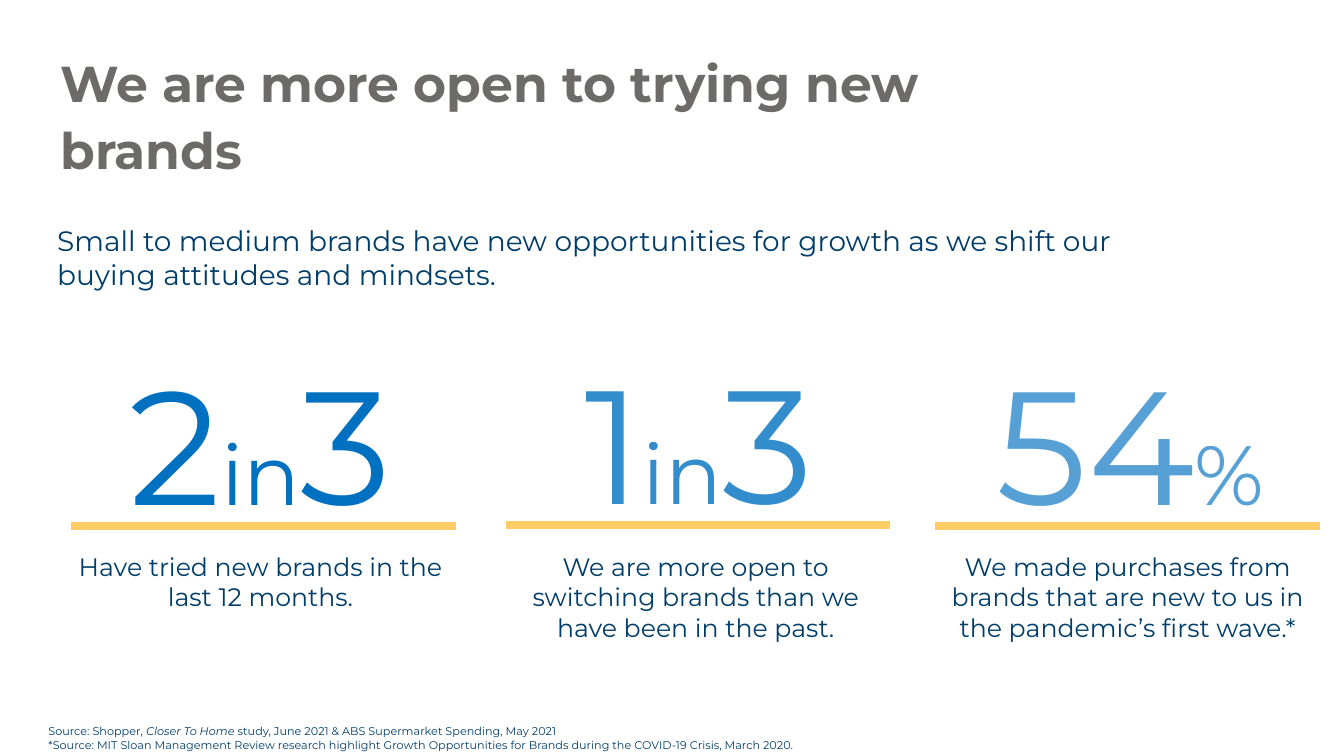
from dataclasses import dataclass

from lxml.etree import SubElement
from pptx import Presentation
from pptx.dml.color import RGBColor
from pptx.enum.shapes import MSO_CONNECTOR as Connector
from pptx.enum.text import MSO_ANCHOR as Anchor, PP_ALIGN as Align
from pptx.oxml.ns import qn
from pptx.util import Cm, Pt

FONT = "Montserrat"
COLORS = {"title": "6C6B6A", "body": "003D69", "figure": "0070C0", "rule": "FFCC66"}


@dataclass
class Box:
    left: float
    top: float
    width: float
    height: float


def add_run(paragraph, text, size, color, bold=False, italic=False, opacity=100):
    run = paragraph.add_run()
    run.text = text
    font = run.font
    font.name, font.size = FONT, Pt(size)
    font.bold, font.italic = bold, italic
    font.color.rgb = RGBColor.from_string(COLORS[color])
    if opacity < 100:
        rgb = run._r.find(".//" + qn("a:srgbClr"))
        SubElement(rgb, qn("a:alpha")).set("val", str(opacity * 1000))


def add_frame(slide, box):
    frame = slide.shapes.add_textbox(
        Cm(box.left), Cm(box.top), Cm(box.width), Cm(box.height)
    ).text_frame
    frame.word_wrap = True
    frame.vertical_anchor = Anchor.TOP
    return frame


def add_title(slide, box):
    frame = add_frame(slide, box)
    frame.margin_left = frame.margin_right = frame.margin_top = frame.margin_bottom = 0
    heading = frame.paragraphs[0]
    heading.line_spacing = 1.1
    add_run(heading, "We are more open to trying new brands", 36, "title", bold=True)


def add_intro(slide, box):
    intro = add_frame(slide, box).paragraphs[0]
    add_run(intro, "Small to medium brands have new opportunities for growth "
            "as we shift our buying attitudes and mindsets.", 20, "body")


def add_rule(slide, left, top, width):
    rule = slide.shapes.add_connector(
        Connector.STRAIGHT, Cm(left), Cm(top), Cm(left + width), Cm(top)
    )
    rule.line.color.rgb = RGBColor.from_string(COLORS["rule"])
    rule.line.width = Pt(6)
    SubElement(rule._element.spPr, qn("a:effectLst"))


def add_statistic(slide, box, figure_parts, caption_text, opacity, figure_shift, rule_shift):
    figure = add_frame(
        slide, Box(box.left + figure_shift, box.top, box.width, 5.18)
    ).paragraphs[0]
    figure.alignment = Align.CENTER
    for text, size in figure_parts:
        add_run(figure, text, size, "figure", opacity=opacity)
    add_rule(slide, box.left + rule_shift, box.top + 4.7, 9.69)
    caption = add_frame(
        slide, Box(box.left, 13.77, box.width, 2.57)
    ).paragraphs[0]
    caption.alignment = Align.CENTER
    add_run(caption, caption_text, 18, "body")


def add_sources(slide, box):
    frame = add_frame(slide, box)
    study = frame.paragraphs[0]
    add_run(study, "Source: Shopper, ", 8, "body")
    add_run(study, "Closer To Home ", 8, "body", italic=True)
    add_run(study, "study, June 2021 & ABS Supermarket Spending, May 2021", 8, "body")
    add_run(frame.add_paragraph(), "*Source: MIT Sloan Management Review research highlight "
            "Growth Opportunities for Brands during the COVID-19 Crisis, March 2020.", 8, "body")


def main():
    deck = Presentation()
    deck.slide_width, deck.slide_height = Cm(33.87), Cm(19.05)
    slide = deck.slides.add_slide(deck.slide_layouts[6])

    add_title(slide, Box(1.52, 1.17, 23.44, 1.52))
    add_intro(slide, Box(1.19, 5.51, 27.64, 1.96))
    big, small = 115, 60
    statistics = [
        (Box(1.65, 8.56, 9.83, 7.78), [("2", big), ("in", small), ("3", big)],
         "Have tried new brands in the last 12 months.", 100, 0, 0.15),
        (Box(12.62, 8.53, 9.83, 7.78), [("1", big), ("in", small), ("3", big)],
         "We are more open to switching brands than we have been in the past.", 80, 0.08, 0.13),
        (Box(23.57, 8.56, 9.7, 7.78), [("54", big), ("%", small)],
         "We made purchases from brands that are new to us in the pandemic’s first wave.*",
         65, 0.07, 0),
    ]
    for statistic in statistics:
        add_statistic(slide, *statistic)
    add_sources(slide, Box(0.97, 18.14, 32.31, 0.94))

    deck.save("out.pptx")


if __name__ == "__main__":
    main()
